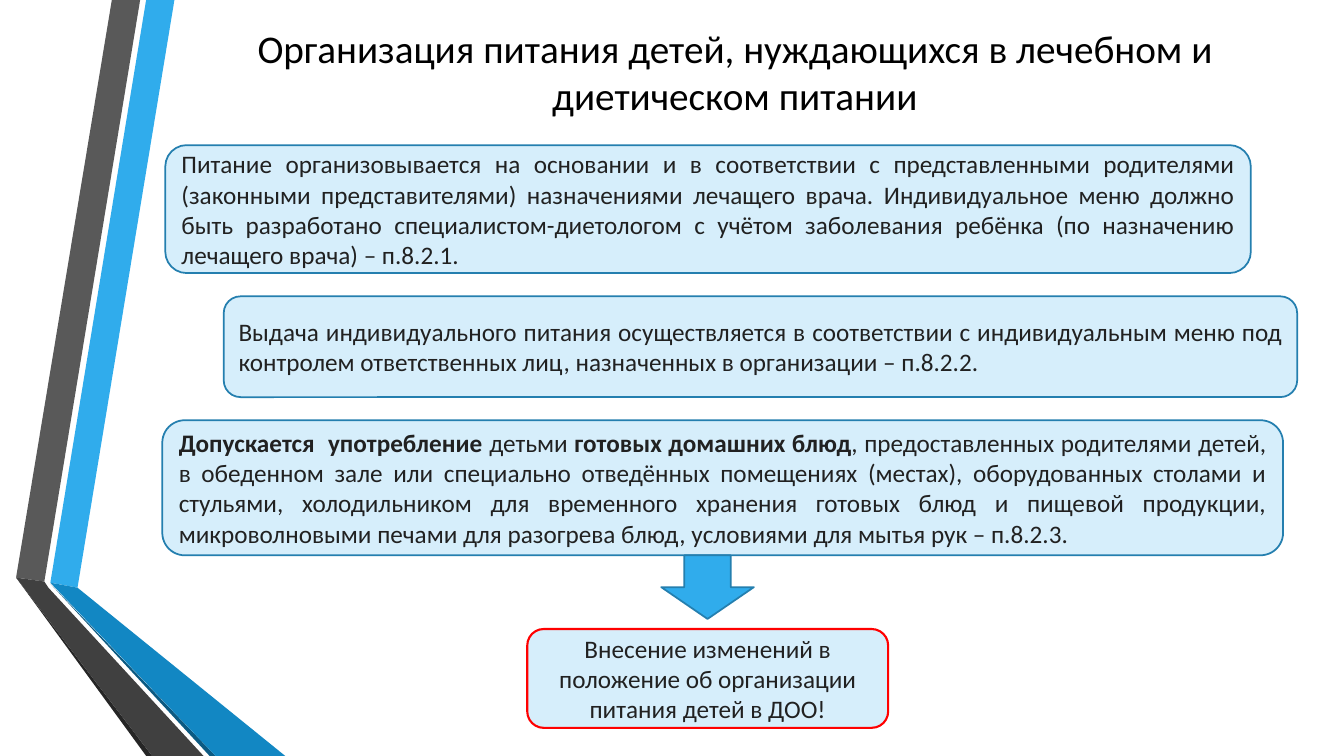
from dataclasses import dataclass

from pptx import Presentation
from pptx.dml.color import RGBColor
from pptx.enum.shapes import MSO_SHAPE as Preset
from pptx.enum.text import MSO_ANCHOR as Anchor, PP_ALIGN as Align
from pptx.shapes.autoshape import Shape
from pptx.slide import Slide
from pptx.text.text import TextFrame
from pptx.util import Pt


@dataclass(frozen=True)
class Theme:
    font: str = "Calibri"
    title_size: float = 28
    body_size: float = 18
    title_color: str = "000000"
    body_color: str = "212121"
    card: str = "D6EEFB"
    outline: str = "247FAF"
    alert: str = "FF0000"
    blue: str = "30ACEC"
    blue_fold: str = "1287C3"
    blue_edge: str = "0C5A82"
    gray: str = "595959"
    gray_fold: str = "404040"
    gray_edge: str = "262626"


@dataclass(frozen=True)
class Box:
    left: float
    top: float
    width: float
    height: float


@dataclass(frozen=True)
class Phrase:
    text: str
    bold: bool = False


@dataclass(frozen=True)
class Card:
    box: Box
    phrases: tuple[Phrase, ...]
    align: Align = Align.JUSTIFY
    outline: str = Theme.outline
    outline_width: float = 1.25


@dataclass(frozen=True)
class Band:
    color: str
    points: tuple[tuple[float, float], ...]


THEME = Theme()

TITLE = Phrase("Организация питания детей, нуждающихся в лечебном и диетическом питании")
TITLE_BOX = Box(130.3, 16.6, 789.1, 68.4)
ARROW_BOX = Box(472.3, 396.7, 66.2, 45.4)

BANDS = (
    Band(THEME.blue, ((36, 416.2), (55.4, 419.8), (124.6, 0), (104.4, 0))),
    Band(THEME.gray, ((100.1, 0), (79.9, 0), (11.5, 412.6), (31.7, 415.4))),
    Band(THEME.gray_edge, ((11.5, 412.6), (104.4, 540), (108.7, 540))),
    Band(THEME.blue_edge, ((36, 416.9), (149.8, 540), (154.1, 540))),
    Band(THEME.blue_fold, ((36, 416.2), (154.1, 540), (203.8, 540), (55.4, 419.8))),
    Band(THEME.gray_fold, ((145.4, 540), (34.6, 419.8), (31.7, 415.4), (11.5, 412.6), (108.7, 540))),
)

CARDS = (
    Card(
        Box(118.1, 103.7, 775.4, 91.4),
        (Phrase(
            "Питание организовывается на основании и в соответствии с представленными "
            "родителями (законными представителями) назначениями лечащего врача. "
            "Индивидуальное меню должно быть разработано специалистом-диетологом с учётом "
            "заболевания ребёнка (по назначению лечащего врача) – п.8.2.1."
        ),),
    ),
    Card(
        Box(159.8, 211.7, 766.8, 72),
        (Phrase(
            "Выдача индивидуального питания осуществляется в соответствии с индивидуальным "
            "меню под контролем ответственных лиц, назначенных в организации – п.8.2.2."
        ),),
    ),
    Card(
        Box(115.9, 300.2, 800.6, 96.5),
        (
            Phrase("Допускается  употребление ", bold=True),
            Phrase("детьми "),
            Phrase("готовых домашних блюд", bold=True),
            Phrase(
                ", предоставленных родителями детей, в обеденном зале или специально "
                "отведённых помещениях (местах), оборудованных столами и стульями, "
                "холодильником для временного хранения готовых блюд и пищевой продукции, "
                "микроволновыми печами для разогрева блюд, условиями для мытья рук – п.8.2.3."
            ),
        ),
    ),
    Card(
        Box(376.6, 449.3, 257.8, 70.6),
        (Phrase("Внесение изменений в положение об организации питания детей в ДОО!"),),
        Align.CENTER,
        THEME.alert,
        1.5,
    ),
)


def paint(shape: Shape, fill: str, outline: str = "", width: float = 1.25) -> None:
    shape.shadow.inherit = False
    shape.fill.solid()
    shape.fill.fore_color.rgb = RGBColor.from_string(fill)
    if outline:
        shape.line.color.rgb = RGBColor.from_string(outline)
        shape.line.width = Pt(width)
    else:
        shape.line.fill.background()


def write(frame: TextFrame, phrases: tuple[Phrase, ...], align: Align, size: float, color: str) -> None:
    frame.word_wrap = True
    frame.vertical_anchor = Anchor.MIDDLE
    paragraph = frame.paragraphs[0]
    paragraph.alignment = align
    for phrase in phrases:
        run = paragraph.add_run()
        run.text = phrase.text
        run.font.name = THEME.font
        run.font.size = Pt(size)
        run.font.bold = phrase.bold
        run.font.color.rgb = RGBColor.from_string(color)


def add_preset(slide: Slide, preset: Preset, box: Box) -> Shape:
    return slide.shapes.add_shape(preset, Pt(box.left), Pt(box.top), Pt(box.width), Pt(box.height))


def draw_band(slide: Slide, band: Band) -> None:
    start, *rest = [(Pt(x), Pt(y)) for x, y in band.points]
    outline = slide.shapes.build_freeform(*start)
    outline.add_line_segments(rest)
    paint(outline.convert_to_shape(), band.color)


def draw_title(slide: Slide) -> None:
    title = slide.shapes.title
    title.left, title.top = Pt(TITLE_BOX.left), Pt(TITLE_BOX.top)
    title.width, title.height = Pt(TITLE_BOX.width), Pt(TITLE_BOX.height)
    write(title.text_frame, (TITLE,), Align.CENTER, THEME.title_size, THEME.title_color)


def draw_card(slide: Slide, card: Card) -> None:
    panel = add_preset(slide, Preset.ROUNDED_RECTANGLE, card.box)
    paint(panel, THEME.card, card.outline, card.outline_width)
    write(panel.text_frame, card.phrases, card.align, THEME.body_size, THEME.body_color)


def main() -> None:
    deck = Presentation()
    deck.slide_width, deck.slide_height = Pt(960), Pt(540)
    slide = deck.slides.add_slide(deck.slide_layouts[5])
    for band in BANDS:
        draw_band(slide, band)
    draw_title(slide)
    for card in CARDS:
        draw_card(slide, card)
    paint(add_preset(slide, Preset.DOWN_ARROW, ARROW_BOX), THEME.blue, THEME.outline)
    deck.save("out.pptx")


if __name__ == "__main__":
    main()
